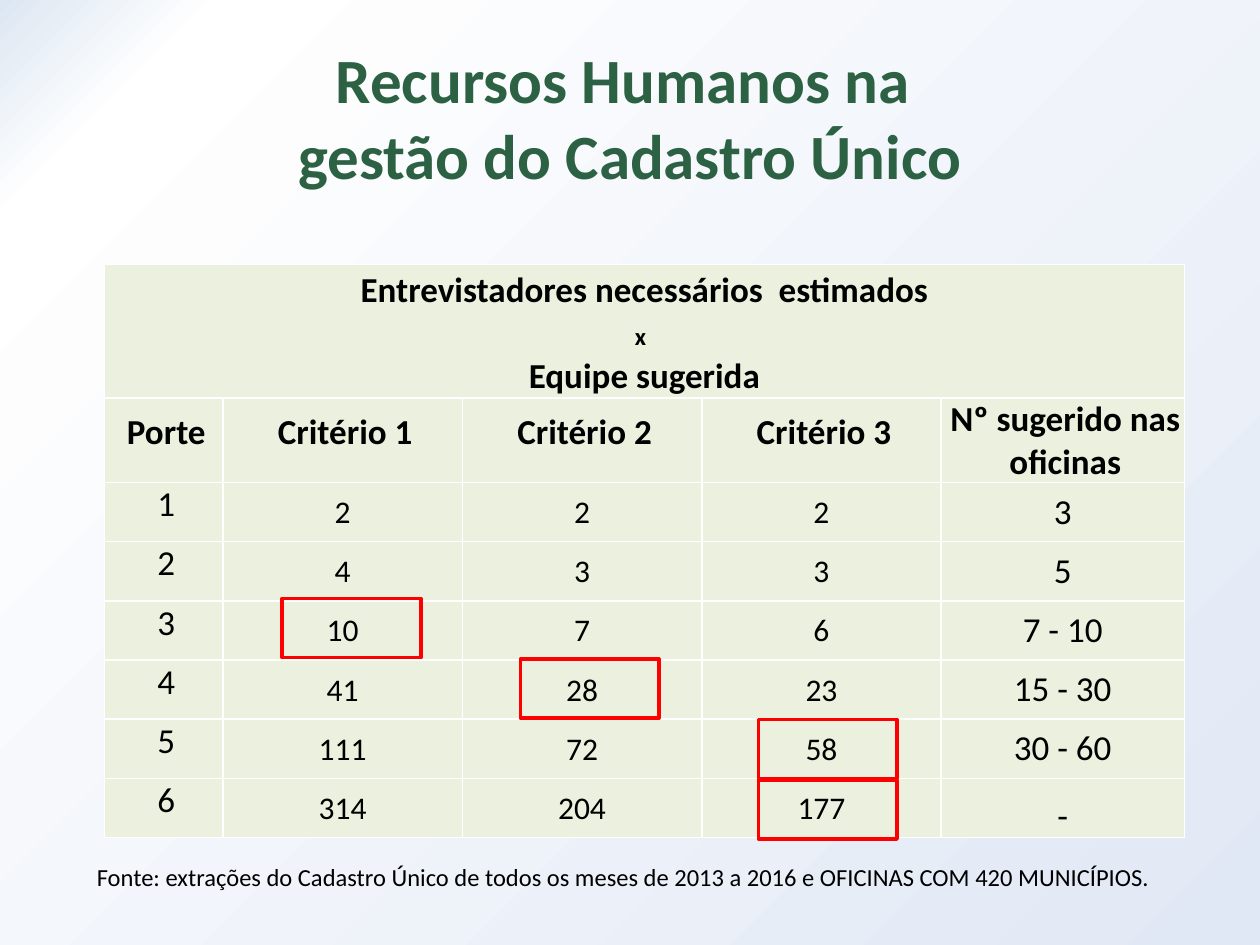
from copy import deepcopy

from lxml.etree import SubElement
from pptx import Presentation
from pptx.dml.color import RGBColor
from pptx.enum.shapes import MSO_SHAPE
from pptx.enum.text import MSO_ANCHOR, PP_ALIGN
from pptx.oxml.ns import qn
from pptx.util import Inches, Pt

ROWS = [
    ["Porte", "Critério 1", "Critério 2", "Critério 3", "Nº sugerido nas oficinas"],
    ["1", "2", "2", "2", "3"],
    ["2", "4", "3", "3", "5"],
    ["3", "10", "7", "6", "7 - 10"],
    ["4", "41", "28", "23", "15 - 30"],
    ["5", "111", "72", "58", "30 - 60"],
    ["6", "314", "204", "177", "-"],
]
WIDTHS = [0.94, 1.9, 1.9, 1.9, 1.93]
HEIGHTS = [1.06, 0.67] + [0.47] * 6


def tint(color, value):
    color.rgb = RGBColor.from_string(value)


def write(frame, lines, size=20, color="000000", bold=False,
          align=PP_ALIGN.CENTER, anchor=MSO_ANCHOR.MIDDLE, lead=None, indent=0):
    """Fill a frame; each line is a string or a list of (text, size) runs."""
    frame.word_wrap = True
    frame.vertical_anchor = anchor
    for i, line in enumerate(lines):
        para = frame.add_paragraph() if i else frame.paragraphs[0]
        para.alignment = align
        if lead:
            para.line_spacing = Pt(lead)
        if indent:
            props = para._p.get_or_add_pPr()
            props.set("marL", str(Inches(indent)))
            props.set("indent", "0")
        for text, points in [(line, size)] if isinstance(line, str) else line:
            for j, part in enumerate(text.split("\n")):
                if j:
                    para.add_line_break()
                run = para.add_run()
                run.text = part
                run.font.name = "Calibri"
                run.font.size = Pt(points)
                run.font.bold = bold
                tint(run.font.color, color)


def add_text(slide, x, y, w, h, lines, **style):
    box = slide.shapes.add_textbox(Inches(x), Inches(y), Inches(w), Inches(h))
    write(box.text_frame, lines, **style)


def paint_background(slide):
    fill = slide.background.fill
    fill.gradient()
    fill.gradient_angle = 315
    stops = slide.element.find(".//" + qn("a:gsLst"))
    stops.append(deepcopy(stops[-1]))
    colors = [(0, "DCE6F2"), (0.1, "FFFFFF"), (1, "E1E8F5")]
    for stop, (place, color) in zip(fill.gradient_stops, colors):
        stop.position = place
        tint(stop.color, color)


def style_cell(cell, inset=0):
    cell.margin_left = cell.margin_right = cell.margin_top = Inches(inset)
    cell.margin_bottom = 0
    props = cell._tc.get_or_add_tcPr()
    for side in ("lnL", "lnR", "lnT", "lnB"):
        line = SubElement(props, qn("a:" + side), w=str(Pt(1)))
        solid = SubElement(line, qn("a:solidFill"))
        SubElement(solid, qn("a:srgbClr"), val="FFFFFF")
    cell.fill.solid()
    tint(cell.fill.fore_color, "EBF1DE")


def add_staff_table(slide, x, y):
    table = slide.shapes.add_table(
        len(HEIGHTS), len(WIDTHS), Inches(x), Inches(y),
        Inches(sum(WIDTHS)), Inches(sum(HEIGHTS))).table
    for column, width in zip(table.columns, WIDTHS):
        column.width = Inches(width)
    for row, height in zip(table.rows, HEIGHTS):
        row.height = Inches(height)

    for c in range(len(WIDTHS)):
        style_cell(table.cell(0, c))
    head = table.cell(0, 0)
    head.merge(table.cell(0, len(WIDTHS) - 1))
    write(head.text_frame,
          ["Entrevistadores necessários  estimados", [("x", 14), (" ", 20)],
           "Equipe sugerida"], bold=True, anchor=MSO_ANCHOR.BOTTOM)
    head.vertical_anchor = MSO_ANCHOR.BOTTOM

    for r, values in enumerate(ROWS, 1):
        for c, value in enumerate(values):
            cell = table.cell(r, c)
            title, last = r == 1, c == len(WIDTHS) - 1
            number = not title and 0 < c and not last
            style_cell(cell, 0.01 if number else 0)
            write(cell.text_frame, [value], size=18 if number else 20, bold=title,
                  lead=16 if c == 0 or title and not last else None,
                  indent=0.04 if c == 0 or title else 0)
            cell.vertical_anchor = MSO_ANCHOR.BOTTOM if value == "-" else MSO_ANCHOR.MIDDLE


def add_marks(slide, x, y):
    """Frame the suggested values, one column index for each row down."""
    for row, column in enumerate([0, 1, 2, 2]):
        mark = slide.shapes.add_shape(
            MSO_SHAPE.RECTANGLE, Inches(x + 1.89 * column), Inches(y + 0.48 * row),
            Inches(1.1), Inches(0.47))
        mark.shadow.inherit = False
        mark.fill.background()
        tint(mark.line.color, "FF0000")
        mark.line.width = Pt(2)


def main():
    deck = Presentation()
    deck.slide_width, deck.slide_height = Inches(10), Inches(7.5)
    slide = deck.slides.add_slide(deck.slide_layouts[6])
    paint_background(slide)
    add_text(slide, 0.5, 0.3, 9, 1.25, ["Recursos Humanos na \ngestão do Cadastro Único"],
             size=36, color="2C6243", bold=True)
    add_text(slide, 0.67, 6.79, 9.14, 0.34,
             ["Fonte: extrações do Cadastro Único de todos os meses de 2013 a 2016 "
              "e OFICINAS COM 420 MUNICÍPIOS."],
             size=14, align=PP_ALIGN.LEFT, anchor=MSO_ANCHOR.TOP)
    add_staff_table(slide, 0.83, 2.1)
    add_marks(slide, 2.24, 4.75)
    deck.save("out.pptx")


if __name__ == "__main__":
    main()
